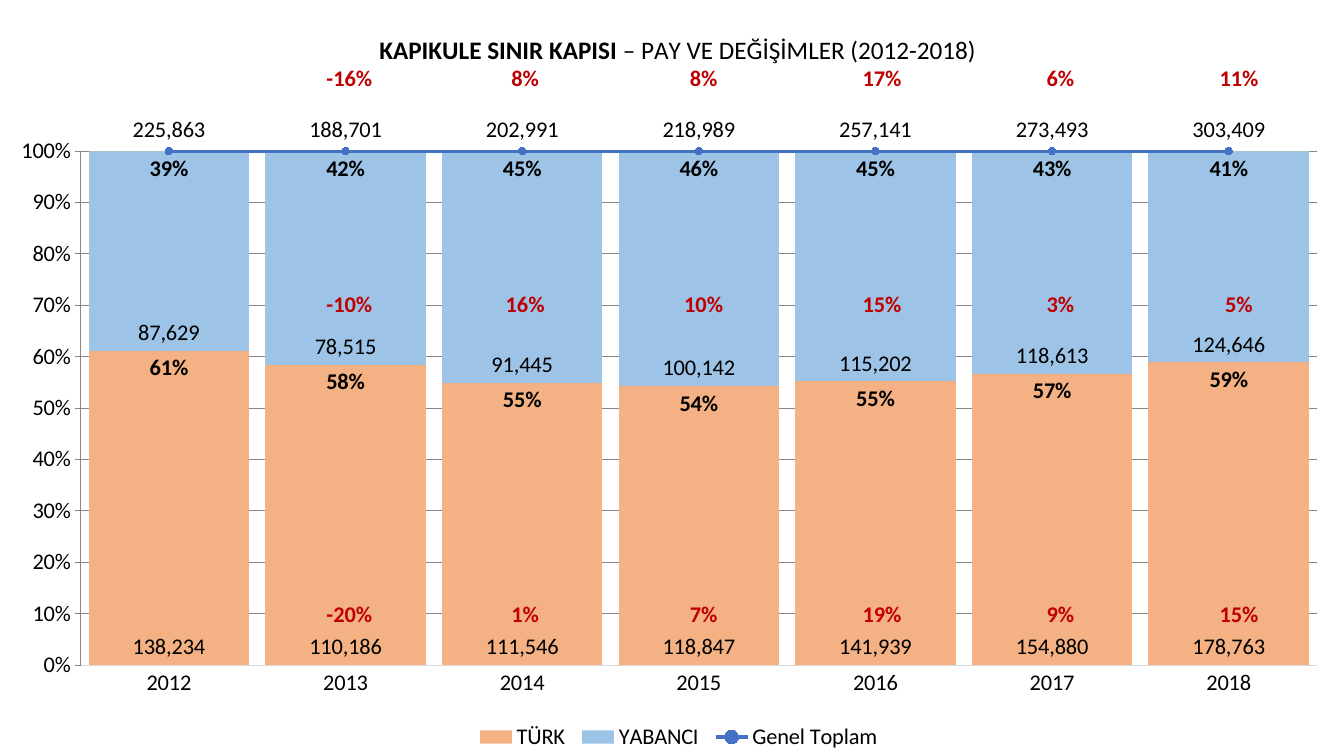
from dataclasses import dataclass

from lxml.etree import SubElement
from pptx import Presentation
from pptx.chart.data import CategoryChartData as ChartData
from pptx.dml.color import RGBColor as Rgb
from pptx.enum.chart import XL_CHART_TYPE as ChartType
from pptx.enum.chart import XL_LABEL_POSITION as LabelPos
from pptx.enum.chart import XL_LEGEND_POSITION as LegendPos
from pptx.enum.chart import XL_MARKER_STYLE as Marker
from pptx.enum.chart import XL_TICK_MARK as Tick
from pptx.oxml import parse_xml
from pptx.oxml.ns import nsdecls, qn
from pptx.util import Inches, Pt


@dataclass(frozen=True)
class Theme:
    font: str = "Calibri"
    body: int = 16
    title: int = 18
    text: str = "000000"
    change: str = "C00000"
    grid: str = "D9D9D9"
    total: str = "4472C4"


THEME = Theme()
WIDTH, HEIGHT = 13.33, 7.5
COUNT, SHARE = "#,##0", "0%"
YEARS = [str(year) for year in range(2012, 2019)]

# Name, values, label format, label position, colour
COLUMNS = [
    ("TÜRK", (138234, 110186, 111546, 118847, 141939, 154880, 178763),
     COUNT, LabelPos.INSIDE_BASE, "F4B183"),
    ("Series 2", (0.61, 0.58, 0.55, 0.54, 0.55, 0.57, 0.59),
     SHARE, LabelPos.INSIDE_END, "ED7D31"),
    ("YABANCI", (87629, 78515, 91445, 100142, 115202, 118613, 124646),
     COUNT, LabelPos.INSIDE_BASE, "9DC3E6"),
    ("Series 4", (0.39, 0.42, 0.45, 0.46, 0.45, 0.43, 0.41),
     SHARE, LabelPos.INSIDE_END, "FFC000"),
]
TOTAL = ("Genel Toplam", (225863, 188701, 202991, 218989, 257141, 273493, 303409))

# Top of each row of yearly changes, in inches
CHANGES = {
    5.9: ("-20%", "1%", "7%", "19%", "9%", "15%"),
    2.83: ("-10%", "16%", "10%", "15%", "3%", "5%"),
    0.59: ("-16%", "8%", "8%", "17%", "6%", "11%"),
}


def style_font(font, size=THEME.body, color=THEME.text, bold=False):
    font.name, font.size, font.bold = THEME.font, Pt(size), bold
    font.color.rgb = Rgb.from_string(color)


def label_values(series, number_format, position):
    labels = series.data_labels
    labels.show_value = True
    labels.number_format, labels.number_format_is_linked = number_format, False
    labels.position = position
    style_font(labels.font, bold=number_format == SHARE)


def set_layout(part, index, inner=False, **shares):
    """Place a chart part by shares of the chart's size."""
    for old in part.findall(qn("c:layout")):
        part.remove(old)
    layout = parse_xml(f"<c:layout {nsdecls('c')}><c:manualLayout/></c:layout>")
    settings = {"layoutTarget": "inner"} if inner else {}
    settings |= {"xMode": "edge", "yMode": "edge"} | shares
    for tag, value in settings.items():
        SubElement(layout[0], qn(f"c:{tag}")).set("val", str(value))
    part.insert(index, layout)


def move_total_to_line(chart):
    """Turn the last column series into a line on hidden second axes."""
    columns = chart.plots[0]
    total = columns.series[-1]._element
    for flag in total.findall(qn("c:invertIfNegative")):
        total.remove(flag)
    line = parse_xml(
        f'<c:lineChart {nsdecls("c")}><c:grouping val="percentStacked"/>'
        '<c:varyColors val="0"/><c:marker val="1"/>'
        '<c:axId val="5001"/><c:axId val="5002"/></c:lineChart>')
    line.insert(2, total)
    columns._element.addnext(line)
    previous = chart.value_axis._element
    for tag, own, other, side, crosses in (("catAx", 5001, 5002, "b", "autoZero"),
                                           ("valAx", 5002, 5001, "r", "max")):
        axis = parse_xml(
            f'<c:{tag} {nsdecls("c")}><c:axId val="{own}"/>'
            '<c:scaling><c:orientation val="minMax"/></c:scaling>'
            f'<c:delete val="1"/><c:axPos val="{side}"/>'
            f'<c:crossAx val="{other}"/><c:crosses val="{crosses}"/></c:{tag}>')
        previous.addnext(axis)
        previous = axis
    return chart.plots[1].series[0]


def style_axes(chart):
    for axis in (chart.category_axis, chart.value_axis):
        axis.major_tick_mark = axis.minor_tick_mark = Tick.NONE
        style_font(axis.tick_labels.font)
    years, shares = chart.category_axis, chart.value_axis
    shares.has_major_gridlines = True
    for line in (years.format.line, shares.major_gridlines.format.line):
        line.color.rgb, line.width = Rgb.from_string(THEME.grid), Pt(0.75)
    shares.format.line.fill.background()
    shares.tick_labels.number_format = SHARE
    shares.tick_labels.number_format_is_linked = False


def add_title(chart):
    chart.has_title = True
    paragraph = chart.chart_title.text_frame.paragraphs[0]
    for text, bold in (("KAPIKULE SINIR KAPISI", True),
                       (" – PAY VE DEĞİŞİMLER (2012-2018)", False)):
        run = paragraph.add_run()
        run.text = text
        style_font(run.font, THEME.title, bold=bold)
    set_layout(chart.chart_title._element, 1, x=0.28, y=0.04)


def add_legend(chart, hidden):
    chart.has_legend = True
    legend = chart.legend
    legend.position, legend.include_in_layout = LegendPos.BOTTOM, False
    style_font(legend.font)
    set_layout(legend._element, 1, x=0.35, y=0.95, w=0.31, h=0.05)
    for index in reversed(hidden):
        legend._element.insert(1, parse_xml(
            f'<c:legendEntry {nsdecls("c")}><c:idx val="{index}"/>'
            '<c:delete val="1"/></c:legendEntry>'))


def add_share_chart(slide, left, top, width, height):
    data = ChartData(number_format=COUNT)
    data.categories = YEARS
    for name, values, number_format, *_ in COLUMNS:
        data.add_series(name, values, number_format)
    data.add_series(*TOTAL)
    box = [Inches(length) for length in (left, top, width, height)]
    chart = slide.shapes.add_chart(ChartType.COLUMN_STACKED_100, *box, data).chart
    style_font(chart.font)

    # Columns
    columns = chart.plots[0]
    columns.gap_width, columns.overlap, columns.vary_by_categories = 10, 100, False
    for series, (_, _, number_format, position, color) in zip(columns.series, COLUMNS):
        series.format.fill.solid()
        series.format.fill.fore_color.rgb = Rgb.from_string(color)
        label_values(series, number_format, position)

    # Line of totals
    total = move_total_to_line(chart)
    color = Rgb.from_string(THEME.total)
    total.smooth = False
    total.format.line.color.rgb, total.format.line.width = color, Pt(2.25)
    total.marker.style, total.marker.size = Marker.CIRCLE, 5
    total.marker.format.fill.solid()
    total.marker.format.fill.fore_color.rgb = color
    total.marker.format.line.color.rgb = color
    label_values(total, COUNT, LabelPos.ABOVE)

    # Axes, title and legend
    style_axes(chart)
    add_title(chart)
    add_legend(chart, hidden=(1, 3))
    plot_area = columns._element.getparent()
    set_layout(plot_area, 0, inner=True, x=0.06, y=0.2, w=0.92, h=0.68)


def add_change_row(slide, changes, left, top, width, height, pitch=1.77, offset=0.2):
    box = [Inches(length) for length in (left, top, width, height)]
    frame = slide.shapes.add_textbox(*box).text_frame
    frame.word_wrap = True
    paragraph = frame.paragraphs[0]
    paragraph.text = "\t".join(changes)
    style_font(paragraph.font, color=THEME.change, bold=True)
    # One centred tab stop per year after the first
    stops = parse_xml(f"<a:tabLst {nsdecls('a')}/>")
    for column in range(1, len(changes)):
        stop = SubElement(stops, qn("a:tab"))
        stop.set("pos", str(Inches(offset + column * pitch)))
        stop.set("algn", "ctr")
    paragraph._p.get_or_add_pPr().insert(0, stops)


def main():
    deck = Presentation()
    deck.slide_width, deck.slide_height = Inches(WIDTH), Inches(HEIGHT)
    slide = deck.slides.add_slide(deck.slide_layouts[6])
    add_share_chart(slide, 0, 0, WIDTH, HEIGHT)
    for top, changes in CHANGES.items():
        add_change_row(slide, changes, 3.14, top, 9.97, 0.37)
    deck.save("out.pptx")


if __name__ == "__main__":
    main()
